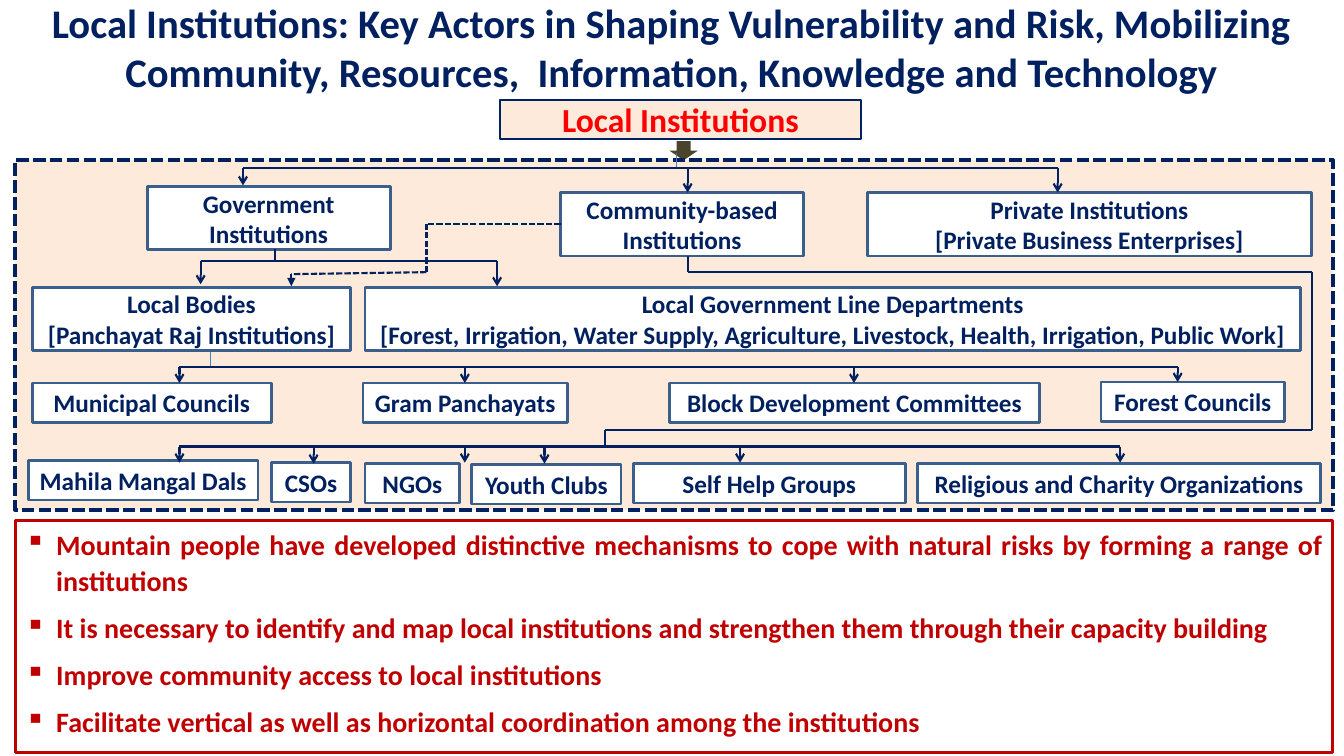
import pptx
import pptx.util
import pptx.dml.color
import pptx.enum.dml
import pptx.enum.shapes
import pptx.enum.text
import lxml.etree
from dataclasses import dataclass
from itertools import pairwise

ALIGN = pptx.enum.text.PP_ALIGN
SHAPE = pptx.enum.shapes.MSO_SHAPE
DASH = pptx.enum.dml.MSO_LINE.SQUARE_DOT


@dataclass(frozen=True)
class Theme:
    font: str = "Calibri"
    navy: str = "002060"
    peach: str = "FDEADA"
    white: str = "FFFFFF"
    edge: str = "3A5F8C"
    thin: str = "4B7EBC"
    olive: str = "4A452A"
    red: str = "FF0000"
    dark: str = "C00000"
    title: int = 29
    head: int = 24
    body: int = 20
    label: int = 18


THEME = Theme()


def px(n):
    """One px is a hundredth of an inch."""
    return pptx.util.Emu(n * 9144)


def rgb(tint):
    return pptx.dml.color.RGBColor.from_string(tint)


def sub(node, tag, **attrs):
    name = pptx.oxml.ns.qn(tag)
    return lxml.etree.SubElement(node, name, attrs)


def write(frame, lines, size, tint, align=ALIGN.CENTER):
    frame.word_wrap = True
    frame.auto_size = pptx.enum.text.MSO_AUTO_SIZE.NONE
    for i, line in enumerate(lines):
        para = frame.paragraphs[0] if i == 0 else frame.add_paragraph()
        para.text = line
        para.alignment = align
        font = para.font
        font.name, font.size, font.bold = THEME.font, pptx.util.Pt(size), True
        font.color.rgb = rgb(tint)


def shape(slide, box, fill=None, edge=None, width=2, kind=SHAPE.RECTANGLE):
    item = slide.shapes.add_shape(kind, *map(px, box))
    item.shadow.inherit = False
    if fill:
        item.fill.solid()
        item.fill.fore_color.rgb = rgb(fill)
    else:
        item.fill.background()
    if edge:
        item.line.color.rgb = rgb(edge)
        item.line.width = pptx.util.Pt(width)
    else:
        item.line.fill.background()
    return item


def label(item, lines, size, tint):
    frame = item.text_frame
    frame.margin_left = frame.margin_right = px(5)
    frame.margin_top = frame.margin_bottom = 0
    frame.vertical_anchor = pptx.enum.text.MSO_ANCHOR.MIDDLE
    write(frame, lines, size, tint)


def title(slide, box):
    item = slide.shapes.title
    item.left, item.top, item.width, item.height = map(px, box)
    item.text_frame.vertical_anchor = pptx.enum.text.MSO_ANCHOR.TOP
    text = ("Local Institutions: Key Actors in Shaping Vulnerability and Risk, "
            "Mobilizing Community, Resources,  Information, Knowledge and Technology")
    write(item.text_frame, [text], THEME.title, THEME.navy)


def root(slide, box):
    """Top box of the chart, with the block arrow under it."""
    left, top, wide, high = box
    item = shape(slide, box, THEME.peach, THEME.navy, 1.5)
    label(item, ["Local Institutions"], THEME.head, THEME.red)
    shape(slide, (left + 168, top + high + 2, 28, 19), THEME.olive,
          kind=SHAPE.DOWN_ARROW)


NODES = [
    (131, 26, 241, 63, ["Government", "Institutions"]),
    (541, 32, 241, 63, ["Community-based Institutions"]),
    (845, 32, 441, 63, ["Private Institutions", "[Private Business Enterprises]"]),
    (17, 126, 316, 63, ["Local Bodies", "[Panchayat Raj Institutions]"]),
    (347, 126, 928, 63, [
        "Local Government Line Departments",
        "[Forest, Irrigation, Water Supply, Agriculture, Livestock, Health, "
        "Irrigation, Public Work]"]),
    (17, 221, 237, 39, ["Municipal Councils"]),
    (345, 221, 203, 39, ["Gram Panchayats"]),
    (649, 221, 367, 39, ["Block Development Committees"]),
    (1077, 220, 182, 39, ["Forest Councils"]),
    (13, 298, 228, 39, ["Mahila Mangal Dals"]),
    (254, 300, 79, 39, ["CSOs"]),
    (347, 301, 94, 39, ["NGOs"]),
    (453, 302, 148, 39, ["Youth Clubs"]),
    (613, 301, 270, 39, ["Self Help Groups"]),
    (895, 301, 400, 39, ["Religious and Charity Organizations"]),
]

# Height of each crossbar, then x and end of each arrow below it
FORKS = [
    (8, [(226, 25), (667, 32), (1034, 32)]),
    (100, [(184, 123), (478, 125)]),
    (205, [(163, 221), (446, 221), (832, 221), (1153, 220)]),
    (284, [(163, 300), (296, 301), (446, 300), (525, 301), (719, 300),
           (1096, 300)]),
]


def chart(slide, box):
    left, top, wide, high = box
    frame = shape(slide, box, THEME.peach, THEME.navy, 3)
    frame.line.dash_style = DASH

    def route(*spots, tint=THEME.navy, width=1.5, dash=None, tip=None):
        """Join the spots with straight lines."""
        for (x, y), (u, v) in pairwise(spots):
            line = slide.shapes.add_connector(
                pptx.enum.shapes.MSO_CONNECTOR.STRAIGHT,
                px(left + x), px(top + y), px(left + u), px(top + v))
            line.line.color.rgb = rgb(tint)
            line.line.width = pptx.util.Pt(width)
            if dash:
                line.line.dash_style = dash
            if tip:
                sub(line.line._get_or_add_ln(), "a:tailEnd", type=tip)
            sub(line._element.spPr, "a:effectLst")

    for x, end in ((656, 8), (194, 205)):
        route((x, end - 15), (x, end), tint=THEME.thin, width=0.75)
    for x, y, w, h, lines in NODES:
        item = shape(slide, (left + x, top + y, w, h), THEME.white, THEME.edge)
        label(item, lines, THEME.label, THEME.navy)
    for y, drops in FORKS:
        route((drops[0][0], y), (drops[-1][0], y))
        for x, end in drops:
            route((x, y), (x, end), tip="arrow")
    route((258, 88), (258, 100))
    route((667, 95), (667, 111), (1286, 111), (1286, 268), (585, 268), (585, 284))
    route((541, 63), (408, 63), (408, 111), (274, 113), dash=DASH)
    route((274, 113), (274, 125), tip="triangle")


def points(slide, box):
    item = shape(slide, box, edge=THEME.dark, width=2.25)
    frame = item.text_frame
    frame.vertical_anchor = pptx.enum.text.MSO_ANCHOR.TOP
    write(frame, [
        "Mountain people have developed distinctive mechanisms to cope with "
        "natural risks by forming a range of institutions",
        "It is necessary to identify and map local institutions and strengthen "
        "them through their capacity building",
        "Improve community access to local institutions",
        "Facilitate vertical as well as horizontal coordination among the "
        "institutions",
    ], THEME.body, THEME.dark, ALIGN.JUSTIFY)
    for para in frame.paragraphs:
        para.line_spacing = 1.07
        para.space_after = pptx.util.Pt(8)
        props = para._p.get_or_add_pPr()
        props.set("marL", str(px(31)))
        props.set("indent", str(px(-31)))
        bullet = lxml.etree.Element(pptx.oxml.ns.qn("a:buChar"), char="▪")
        props.insert_element_before(bullet, "a:tabLst", "a:defRPr", "a:extLst")


def main():
    deck = pptx.Presentation()
    deck.slide_width, deck.slide_height = px(1333), px(750)
    slide = deck.slides.add_slide(deck.slide_layouts.get_by_name("Title Only"))
    title(slide, (0, -7, 1333, 111))
    root(slide, (496, 99, 358, 39))
    chart(slide, (15, 159, 1307, 347))
    points(slide, (15, 516, 1307, 231))
    deck.save("out.pptx")


if __name__ == "__main__":
    main()
